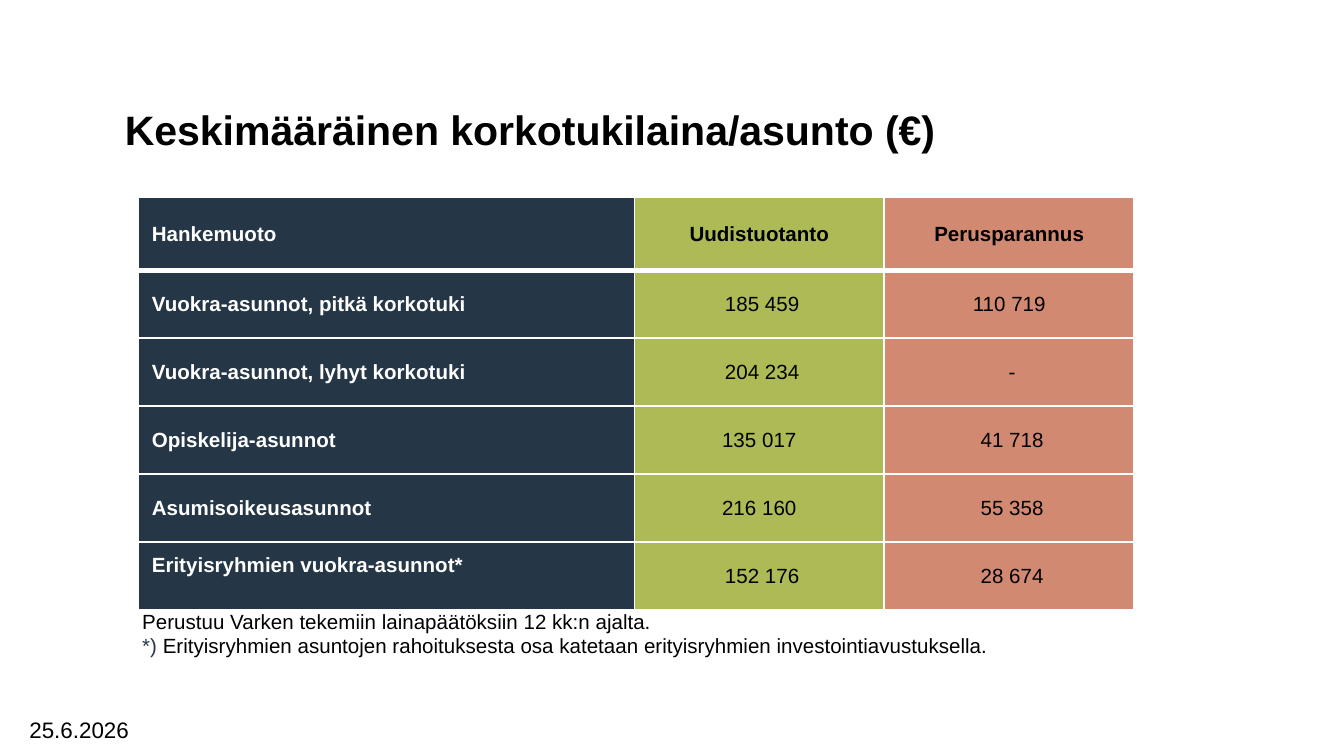
from lxml import etree
from pptx import Presentation
from pptx.dml.color import RGBColor
from pptx.enum.text import MSO_ANCHOR, PP_ALIGN
from pptx.oxml.ns import qn
from pptx.util import Inches, Pt

LEFT, CENTER = PP_ALIGN.LEFT, PP_ALIGN.CENTER
TOP, MIDDLE = MSO_ANCHOR.TOP, MSO_ANCHOR.MIDDLE
WIDTH = 10
HEIGHT = WIDTH * 9 / 16
NAVY, GREEN, CORAL, WHITE, BLACK = "253746", "AEBA56", "D18A71", "FFFFFF", "000000"
HARD_SPACE = chr(160)

TITLE = [[("Keskimääräinen korkotukilaina/asunto (€)", BLACK)]]
DATE = [[("25.6.2026", BLACK)]]
NOTES = [
    [("Perustuu Varken tekemiin lainapäätöksiin 12 kk:n ajalta.", BLACK)],
    [("*) ", NAVY),
     ("Erityisryhmien asuntojen rahoituksesta osa katetaan "
      "erityisryhmien investointiavustuksella.", BLACK)],
]
ROWS = [
    ("Hankemuoto", "Uudistuotanto", "Perusparannus"),
    ("Vuokra-asunnot, pitkä korkotuki", " 185 459", "110 719"),
    ("Vuokra-asunnot, lyhyt korkotuki", " 204 234", " -"),
    ("Opiskelija-asunnot", "135 017", " 41 718"),
    ("Asumisoikeusasunnot", "216 160", " 55 358"),
    ("Erityisryhmien vuokra-asunnot*", " 152 176", " 28 674"),
]
COLUMNS = [
    {"width": 3.69, "fill": NAVY, "color": WHITE, "align": LEFT},
    {"width": 1.86, "fill": GREEN, "color": BLACK, "align": CENTER},
    {"width": 1.86, "fill": CORAL, "color": BLACK, "align": CENTER},
]
TABLE_LEFT, TABLE_TOP, TABLE_HEIGHT = 1.03, 1.47, 3.07
HEADER_HEIGHT = 0.54
LAST_LABEL_MARGIN = 0.2
TEXT_BOXES = [
    {"at": (0.83, 0.77, 8.82, 0.38), "lines": TITLE, "size": 22, "bold": True, "anchor": MIDDLE},
    {"at": (0.12, 5.28, 1.75, 0.25), "lines": DATE, "size": 12, "bold": False, "anchor": TOP},
    {"at": (0.96, 4.48, 7.4, 0.66), "lines": NOTES, "size": 11, "bold": False, "anchor": TOP},
]


def rgb(color):
    return RGBColor.from_string(color)


def add_run(p, text, color, **formats):
    r = p.add_run()
    r.text = text
    r.font.color.rgb = rgb(color)
    for name, value in {"name": "Arial", **formats}.items():
        setattr(r.font, name, value)


def add_text(slide, at, lines, size, bold, anchor):
    tf = slide.shapes.add_textbox(*map(Inches, at)).text_frame
    tf.word_wrap = True
    tf.vertical_anchor = anchor
    for i, line in enumerate(lines):
        p = tf.add_paragraph() if i else tf.paragraphs[0]
        for text, color in line:
            add_run(p, text, color, size=Pt(size), bold=bold)


def set_borders(cell, widths):
    tc_pr = cell._tc.get_or_add_tcPr()
    for side, width in widths.items():
        ln = etree.SubElement(tc_pr, qn(f"a:ln{side}"), w=str(Pt(width)))
        fill = etree.SubElement(ln, qn("a:solidFill"))
        etree.SubElement(fill, qn("a:srgbClr"), val=WHITE)


def join_digits(text):
    return text[0] + text[1:].replace(" ", HARD_SPACE)


def add_loan_table(slide):
    body_rows = len(ROWS) - 1
    heights = [HEADER_HEIGHT] + [(TABLE_HEIGHT - HEADER_HEIGHT) / body_rows] * body_rows
    total_width = sum(c["width"] for c in COLUMNS)
    table = slide.shapes.add_table(
        len(ROWS), len(COLUMNS), Inches(TABLE_LEFT), Inches(TABLE_TOP),
        Inches(total_width), Inches(TABLE_HEIGHT)).table
    table.horz_banding = False
    for column, style in zip(table.columns, COLUMNS):
        column.width = Inches(style["width"])
    for i, (height, values) in enumerate(zip(heights, ROWS)):
        table.rows[i].height = Inches(height)
        for j, (text, style) in enumerate(zip(values, COLUMNS)):
            is_label = i == 0 or j == 0
            cell = table.cell(i, j)
            set_borders(cell, {"L": 1, "R": 1, "T": 3 if i == 1 else 1, "B": 3 if i == 0 else 1})
            cell.fill.solid()
            cell.fill.fore_color.rgb = rgb(style["fill"])
            cell.vertical_anchor = MIDDLE
            cell.margin_top = cell.margin_bottom = Inches(0.04)
            p = cell.text_frame.paragraphs[0]
            p.alignment = style["align"]
            add_run(p, text if is_label else join_digits(text), style["color"],
                    size=Pt(11), bold=is_label)
    table.cell(body_rows, 0).margin_bottom = Inches(LAST_LABEL_MARGIN)


def main():
    prs = Presentation()
    prs.slide_width, prs.slide_height = Inches(WIDTH), Inches(HEIGHT)
    slide = prs.slides.add_slide(prs.slide_layouts[6])
    for box in TEXT_BOXES:
        add_text(slide, **box)
    add_loan_table(slide)
    prs.save("out.pptx")


if __name__ == "__main__":
    main()
